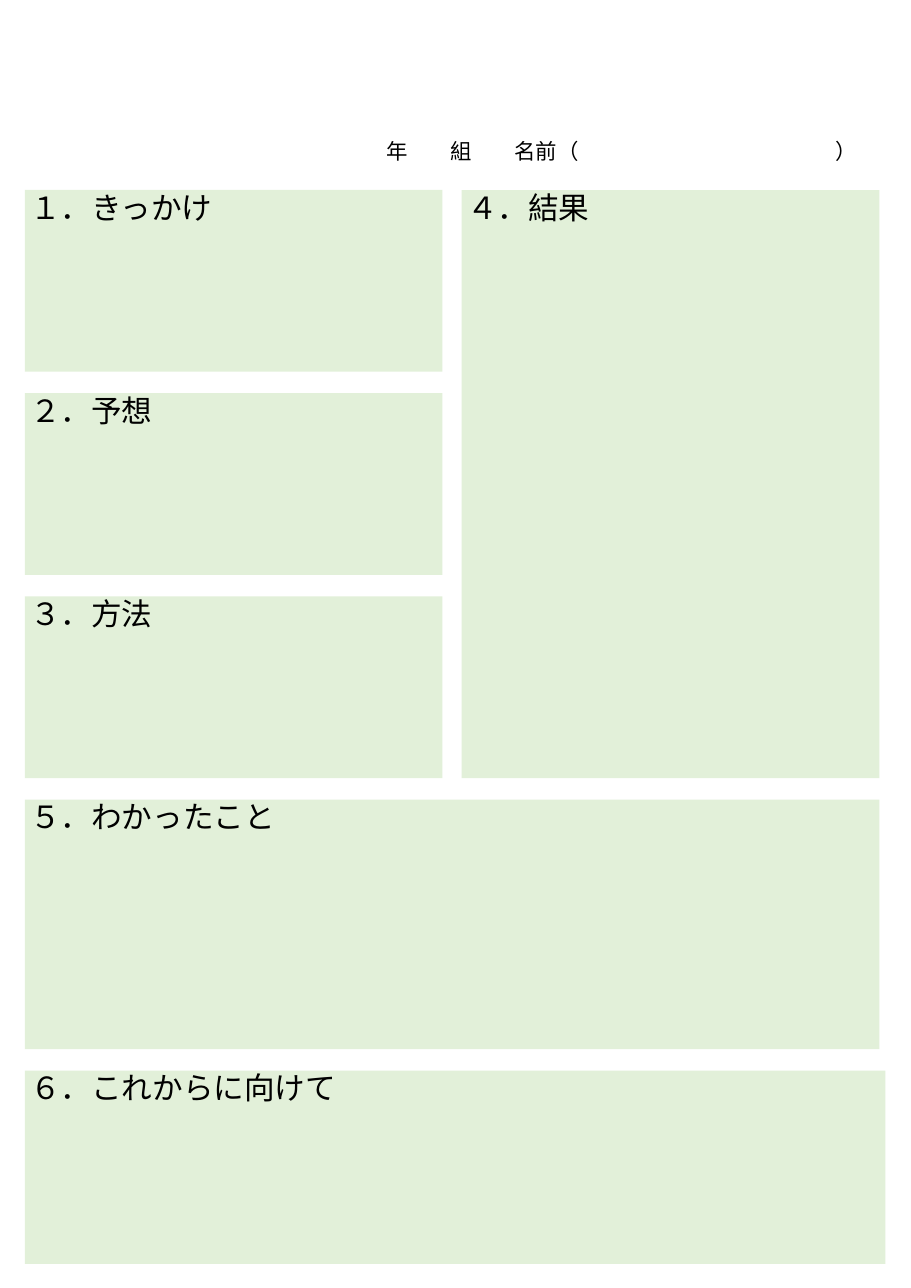
from lxml.etree import SubElement
from pptx import Presentation
from pptx.dml.color import RGBColor
from pptx.enum.shapes import MSO_SHAPE
from pptx.enum.text import MSO_ANCHOR, PP_ALIGN
from pptx.oxml.ns import qn
from pptx.util import Inches, Pt

THEME = {
    "font": "Calibri",
    "ink": RGBColor(0x00, 0x00, 0x00),
    "panel": RGBColor(0xE2, 0xF0, 0xD9),
    "heading": 40,
    "name": 28,
}

# Page grid, in inches
LEFT, TOP = 0.45, 3.45
COLUMN, GUTTER = 7.58, 0.35
ROW, GAP = 3.3, 0.39
FULL = 2 * COLUMN + GUTTER
FINDINGS, FUTURE = 4.53, 3.51

right = LEFT + COLUMN + GUTTER
row_tops = [TOP + i * (ROW + GAP) for i in range(4)]
future_top = row_tops[3] + FINDINGS + GAP


def add_run(paragraph, text, size):
    run = paragraph.add_run()
    run.text = text
    run.font.size = Pt(size)
    run.font.name = THEME["font"]
    run.font.color.rgb = THEME["ink"]


# A2 portrait page
prs = Presentation()
prs.slide_width, prs.slide_height = Pt(1190.5), Pt(1683.75)
slide = prs.slides.add_slide(prs.slide_layouts[6])

# Report sections: heading, left, top, width, height
sections = [
    ("１．きっかけ", LEFT, row_tops[0], COLUMN, ROW),
    ("４．結果", right, TOP, COLUMN, 3 * ROW + 2 * GAP),
    ("６．これからに向けて", LEFT, future_top, FULL + 0.11, FUTURE),
    ("２．予想", LEFT, row_tops[1], COLUMN, ROW),
    ("３．方法", LEFT, row_tops[2], COLUMN, ROW),
    ("５．わかったこと", LEFT, row_tops[3], FULL, FINDINGS),
]
for heading, *box in sections:
    section = slide.shapes.add_shape(MSO_SHAPE.RECTANGLE, *map(Inches, box))
    section.shadow.inherit = False
    section.fill.solid()
    section.fill.fore_color.rgb = THEME["panel"]
    section.line.fill.background()
    section.text_frame.word_wrap = True
    section.text_frame.vertical_anchor = MSO_ANCHOR.TOP
    paragraph = section.text_frame.paragraphs[0]
    paragraph.alignment = PP_ALIGN.LEFT
    paragraph.line_spacing = 0.9
    add_run(paragraph, heading, THEME["heading"])

# Class and name line, with tab stops counted in full-width characters
name_line = slide.shapes.add_textbox(
    Inches(6.13), Inches(2.46), Inches(9.83), Inches(0.57))
name_line.text_frame.word_wrap = True
paragraph = name_line.text_frame.paragraphs[0]
tab_stops = SubElement(paragraph._p.get_or_add_pPr(), qn("a:tabLst"))
for label, characters in [("年", 2), ("組", 5), ("名前（", 8), ("）", 23)]:
    SubElement(tab_stops, qn("a:tab"),
               pos=str(Pt(characters * THEME["name"])), algn="l")
    add_run(paragraph, "\t" + label, THEME["name"])

prs.save("out.pptx")
